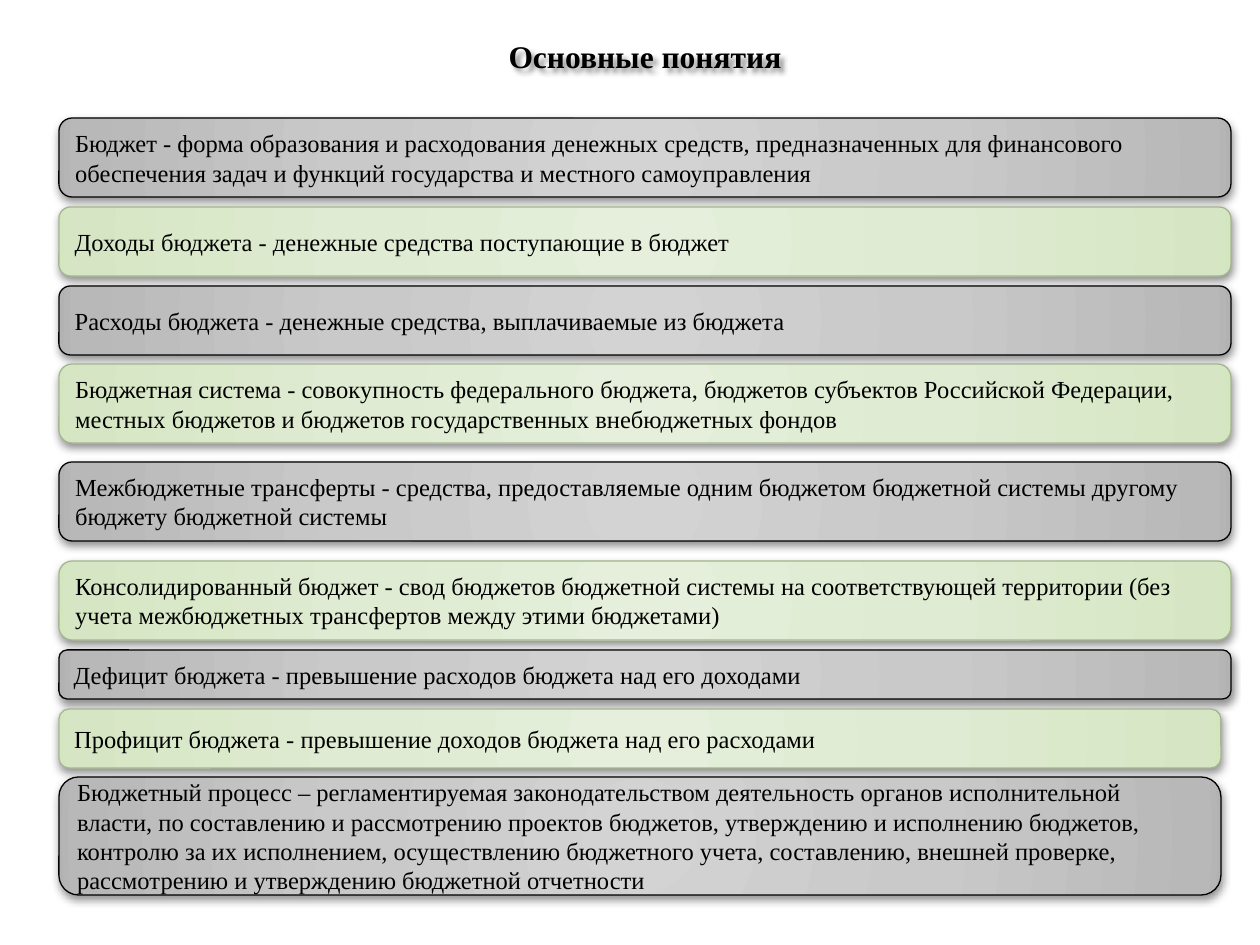
"""Build a slide that defines the basic concepts of the budget."""
from lxml import etree
from pptx import Presentation
from pptx.dml.color import RGBColor
from pptx.enum.shapes import MSO_SHAPE
from pptx.enum.text import MSO_ANCHOR, PP_ALIGN
from pptx.oxml import parse_xml
from pptx.oxml.ns import nsdecls, qn
from pptx.util import Emu, Pt

ROUNDED = MSO_SHAPE.ROUNDED_RECTANGLE
MIDDLE = MSO_ANCHOR.MIDDLE
LEFT, CENTER = PP_ALIGN.LEFT, PP_ALIGN.CENTER
TITLE_ONLY = 5
PX_PER_INCH = 126
FONT = "Times New Roman"
BLACK = "000000"
GRAY = {"stops": {0: "D3D3D3", 50: "C9C9C9", 97: "B8B8B8", 100: "B2B2B2"}, "line": BLACK}
GREEN = {"stops": {0: "E5EFDB", 50: "DFEBD2", 97: "D6E6C4", 100: "D3E6BF"}, "line": "A5B592"}

CONCEPTS = [
    (118, 1172, 79, "Бюджет - форма образования и расходования денежных средств, предназначенных для "
     "финансового обеспечения задач и функций государства и местного самоуправления"),
    (207, 1172, 69, "Доходы бюджета - денежные средства поступающие в бюджет"),
    (286, 1172, 69, "Расходы бюджета - денежные средства, выплачиваемые из бюджета"),
    (364, 1172, 79, "Бюджетная система - совокупность федерального бюджета, бюджетов субъектов "
     "Российской Федерации, местных бюджетов и бюджетов государственных внебюджетных фондов"),
    (462, 1172, 79, "Межбюджетные трансферты - средства, предоставляемые одним бюджетом бюджетной "
     "системы другому бюджету бюджетной системы"),
    (561, 1172, 79, "Консолидированный бюджет - свод бюджетов бюджетной системы на соответствующей "
     "территории (без учета межбюджетных трансфертов между этими бюджетами)"),
    (650, 1172, 49, "Дефицит бюджета - превышение расходов бюджета над его доходами"),
    (709, 1162, 59, "Профицит бюджета - превышение доходов бюджета над его расходами"),
    (777, 1162, 118, "Бюджетный процесс – регламентируемая законодательством деятельность органов "
     "исполнительной власти, по составлению и рассмотрению проектов бюджетов, утверждению и "
     "исполнению бюджетов, контролю за их исполнением, осуществлению бюджетного учета, "
     "составлению, внешней проверке, рассмотрению и утверждению бюджетной отчетности"),
]


def px(length):
    return Emu(round(length * 914400 / PX_PER_INCH))


def rgb(color):
    return RGBColor.from_string(color)


def write(frame, text, size=14, bold=False, align=LEFT, color=BLACK):
    frame.word_wrap = True
    frame.vertical_anchor = MIDDLE
    paragraph = frame.paragraphs[0]
    paragraph.alignment = align
    run = paragraph.add_run()
    run.text = text
    run.font.name = FONT
    run.font.size = Pt(size)
    run.font.bold = bold
    run.font.color.rgb = rgb(color)


def add_shadow(shape, blur, distance, angle, opacity):
    shape.shadow.inherit = False
    effects = shape._element.spPr.find(qn("a:effectLst"))
    shadow = etree.SubElement(effects, qn("a:outerShdw"), blurRad=str(Pt(blur)),
                              dist=str(Pt(distance)), dir=str(angle * 60000),
                              algn="ctr", rotWithShape="0")
    tint = etree.SubElement(shadow, qn("a:srgbClr"), val=BLACK)
    etree.SubElement(tint, qn("a:alpha"), val=str(opacity * 1000))


def add_radial_fill(shape, stops):
    marks = "".join(f'<a:gs pos="{place * 1000}"><a:srgbClr val="{color}"/></a:gs>'
                    for place, color in stops.items())
    shape._element.spPr.append(parse_xml(
        f'<a:gradFill {nsdecls("a")} rotWithShape="1"><a:gsLst>{marks}</a:gsLst>'
        '<a:path path="circle"><a:fillToRect l="50000" t="50000" r="50000" b="50000"/>'
        '</a:path></a:gradFill>'))


class ConceptSlide:
    def __init__(self, deck):
        self.slide = deck.slides.add_slide(deck.slide_layouts[TITLE_ONLY])

    def title(self, left, top, width, height, text):
        title = self.slide.shapes.title
        title.left, title.top = px(left), px(top)
        title.width, title.height = px(width), px(height)
        write(title.text_frame, text, size=18, bold=True, align=CENTER)
        add_shadow(title, 3, 3, 45, 43)

    def card(self, left, top, width, height, text, style):
        card = self.slide.shapes.add_shape(ROUNDED, px(left), px(top), px(width), px(height))
        add_radial_fill(card, style["stops"])
        card.line.color.rgb = rgb(style["line"])
        card.line.width = Pt(0.75)
        add_shadow(card, 5, 2, 90, 43)
        write(card.text_frame, text)


def main():
    deck = Presentation()
    deck.slide_width, deck.slide_height = px(1260), px(945)
    slide = ConceptSlide(deck)
    slide.title(62, 5, 1166, 102, "Основные понятия")
    for index, (top, width, height, text) in enumerate(CONCEPTS):
        slide.card(59, top, width, height, text, GREEN if index % 2 else GRAY)
    deck.save("out.pptx")


if __name__ == "__main__":
    main()
